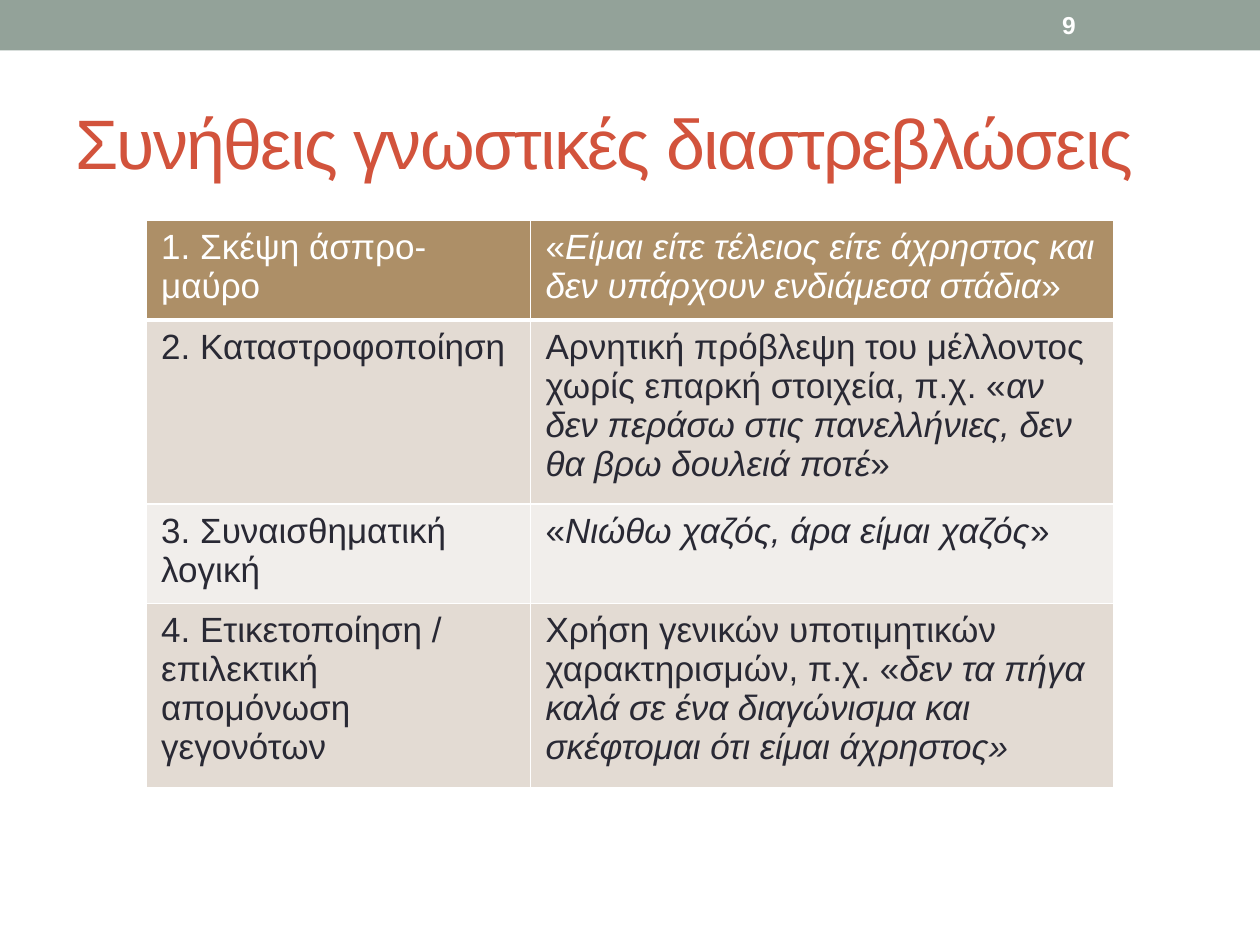
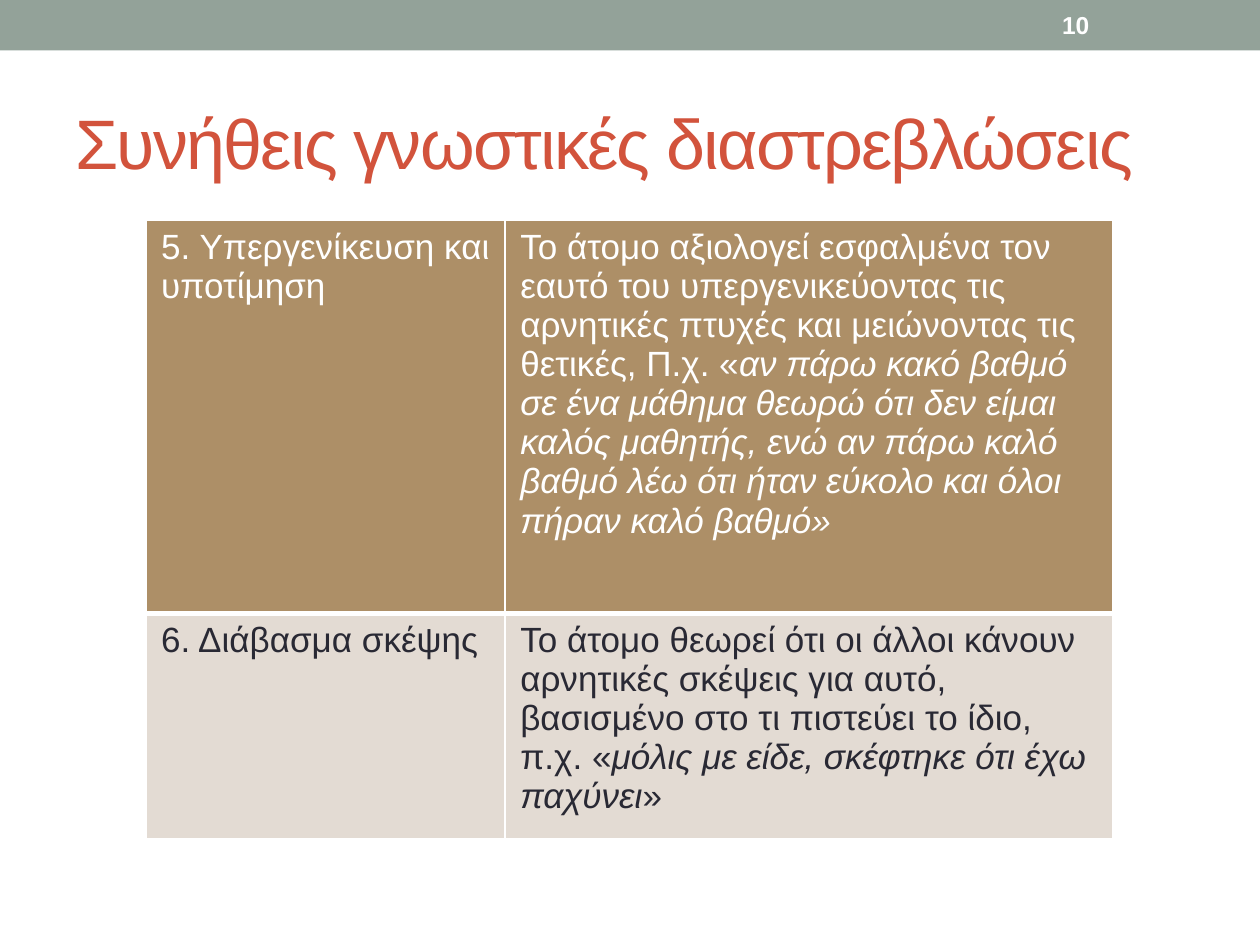
"""Build two slides of tables on common cognitive distortions."""

from dataclasses import dataclass
from typing import NamedTuple

from lxml import etree
from pptx import Presentation
from pptx.dml.color import RGBColor
from pptx.enum.shapes import MSO_SHAPE
from pptx.enum.text import MSO_ANCHOR
from pptx.oxml.ns import qn
from pptx.util import Pt

RECTANGLE = MSO_SHAPE.RECTANGLE
MIDDLE = MSO_ANCHOR.MIDDLE

WHITE = RGBColor(0xFF, 0xFF, 0xFF)
SAGE = RGBColor(0x93, 0xA2, 0x99)
BRICK = RGBColor(0xD2, 0x53, 0x3C)
INK = RGBColor(0x29, 0x29, 0x34)
BRONZE = RGBColor(0xAD, 0x8F, 0x67)
SAND = RGBColor(0xE3, 0xDB, 0xD3)
PALE_SAND = RGBColor(0xF1, 0xEE, 0xEB)

FONT = "Arial"
TITLE = "Συνήθεις γνωστικές διαστρεβλώσεις"
SLIDE_WIDTH, SLIDE_HEIGHT = 720, 540
BAND_HEIGHT = 28.8
TABLE_LEFT, TABLE_TOP = 83.5, 126
CELL_MARGIN_X, CELL_MARGIN_Y = 8.64, 4.32
THIN, THICK = 1, 3


class Box(NamedTuple):
    """A place on the slide, in points."""

    left: float
    top: float
    width: float
    height: float


@dataclass(frozen=True)
class TextStyle:
    """The look of a run of text."""

    size: float
    color: RGBColor
    bold: bool = False
    spacing: float = 0


class Distortion(NamedTuple):
    """One table row: a term, its explanation and an italic example."""

    height: float
    term: str
    explanation: str
    example: str = ""
    closing: str = ""


@dataclass(frozen=True)
class DistortionSlide:
    """The content of one slide."""

    number: int
    column_widths: tuple[float, float]
    distortions: tuple[Distortion, ...]


TITLE_BOX = Box(36, 41.8, 648, 77.8)
NUMBER_BOX = Box(599.8, 1.4, 84.2, 25.9)
TITLE_STYLE = TextStyle(40, BRICK, spacing=-1)
NUMBER_STYLE = TextStyle(14, WHITE, bold=True)
HEADER_STYLE = TextStyle(20, WHITE)
BODY_STYLE = TextStyle(20, INK)
SHORT_ROW, TALL_ROW, HEADER_ROW = 56.9, 105.1, 224.6

SLIDES = (
    DistortionSlide(9, (219.6, 333.4), (
        Distortion(SHORT_ROW, "1. Σκέψη άσπρο-μαύρο", "«",
                   "Είμαι είτε τέλειος είτε άχρηστος και δεν υπάρχουν ενδιάμεσα στάδια", "»"),
        Distortion(TALL_ROW, "2. Καταστροφοποίηση",
                   "Αρνητική πρόβλεψη του μέλλοντος χωρίς επαρκή στοιχεία, π.χ. «",
                   "αν δεν περάσω στις πανελλήνιες, δεν θα βρω δουλειά ποτέ", "»"),
        Distortion(SHORT_ROW, "3. Συναισθηματική λογική", "«",
                   "Νιώθω χαζός, άρα είμαι χαζός", "»"),
        Distortion(TALL_ROW, "4. Ετικετοποίηση / επιλεκτική απομόνωση γεγονότων",
                   "Χρήση γενικών υποτιμητικών χαρακτηρισμών, π.χ. «",
                   "δεν τα πήγα καλά σε ένα διαγώνισμα και σκέφτομαι ότι είμαι άχρηστος»"),
    )),
    DistortionSlide(10, (205.2, 347.4), (
        Distortion(HEADER_ROW, "5. Υπεργενίκευση και υποτίμηση",
                   "Το άτομο αξιολογεί εσφαλμένα τον εαυτό του υπεργενικεύοντας τις "
                   "αρνητικές πτυχές και μειώνοντας τις θετικές, Π.χ. «",
                   "αν πάρω κακό βαθμό σε ένα μάθημα θεωρώ ότι δεν είμαι καλός μαθητής, "
                   "ενώ αν πάρω καλό βαθμό λέω ότι ήταν εύκολο και όλοι πήραν καλό βαθμό»"),
        Distortion(TALL_ROW, "6. Διάβασμα σκέψης",
                   "Το άτομο θεωρεί ότι οι άλλοι κάνουν αρνητικές σκέψεις για αυτό, "
                   "βασισμένο στο τι πιστεύει το ίδιο, π.χ. «",
                   "μόλις με είδε, σκέφτηκε ότι έχω παχύνει", "»"),
    )),
)


def add_run(paragraph, text: str, style: TextStyle, italic: bool = False) -> None:
    """Add one styled run to a paragraph."""
    run = paragraph.add_run()
    run.text = text
    font = run.font
    font.name, font.size = FONT, Pt(style.size)
    font.bold, font.italic = style.bold, italic
    font.color.rgb = style.color
    if style.spacing:
        run._r.get_or_add_rPr().set("spc", str(round(style.spacing * 100)))


def add_text(slide, box: Box, text: str, style: TextStyle) -> None:
    """Add a vertically centred line of text."""
    frame = slide.shapes.add_textbox(*map(Pt, box)).text_frame
    frame.word_wrap = True
    frame.vertical_anchor = MIDDLE
    add_run(frame.paragraphs[0], text, style)


def add_band(slide) -> None:
    """Draw the band across the top of the slide."""
    band = slide.shapes.add_shape(RECTANGLE, 0, 0, Pt(SLIDE_WIDTH), Pt(BAND_HEIGHT))
    band.shadow.inherit = False
    band.fill.solid()
    band.fill.fore_color.rgb = SAGE
    band.line.fill.background()


def set_borders(cell, bottom_width: float) -> None:
    """Give a cell white borders."""
    properties = cell._tc.get_or_add_tcPr()
    widths = {"a:lnL": THIN, "a:lnR": THIN, "a:lnT": THIN, "a:lnB": bottom_width}
    for tag, width in widths.items():
        line = etree.SubElement(properties, qn(tag), w=str(Pt(width)))
        fill = etree.SubElement(line, qn("a:solidFill"))
        etree.SubElement(fill, qn("a:srgbClr"), val=str(WHITE))


def fill_cell(cell, texts: tuple[str, ...], row_index: int) -> None:
    """Style a cell for its row and write its texts, the second in italics."""
    is_header = row_index == 0
    cell.margin_left = cell.margin_right = Pt(CELL_MARGIN_X)
    cell.margin_top = cell.margin_bottom = Pt(CELL_MARGIN_Y)
    set_borders(cell, THICK if is_header else THIN)
    cell.fill.solid()
    band_color = SAND if row_index % 2 else PALE_SAND
    cell.fill.fore_color.rgb = BRONZE if is_header else band_color
    style = HEADER_STYLE if is_header else BODY_STYLE
    for index, text in enumerate(texts):
        if text:
            add_run(cell.text_frame.paragraphs[0], text, style, italic=index == 1)


def add_distortion_table(slide, content: DistortionSlide) -> None:
    """Add the table of terms and explanations."""
    distortions = content.distortions
    box = Box(TABLE_LEFT, TABLE_TOP, sum(content.column_widths),
              sum(distortion.height for distortion in distortions))
    table = slide.shapes.add_table(len(distortions), 2, *map(Pt, box)).table
    table.first_row = table.horz_banding = False
    for column, width in zip(table.columns, content.column_widths):
        column.width = Pt(width)
    for index, distortion in enumerate(distortions):
        table.rows[index].height = Pt(distortion.height)
        fill_cell(table.cell(index, 0), (distortion.term,), index)
        fill_cell(table.cell(index, 1), distortion[2:], index)


def add_distortion_slide(presentation, content: DistortionSlide) -> None:
    """Add one complete slide."""
    slide = presentation.slides.add_slide(presentation.slide_layouts[6])
    add_band(slide)
    add_text(slide, TITLE_BOX, TITLE, TITLE_STYLE)
    add_distortion_table(slide, content)
    add_text(slide, NUMBER_BOX, str(content.number), NUMBER_STYLE)


def main() -> None:
    """Build and save the presentation."""
    presentation = Presentation()
    presentation.slide_width, presentation.slide_height = Pt(SLIDE_WIDTH), Pt(SLIDE_HEIGHT)
    for content in SLIDES:
        add_distortion_slide(presentation, content)
    presentation.save("out.pptx")


if __name__ == "__main__":
    main()
